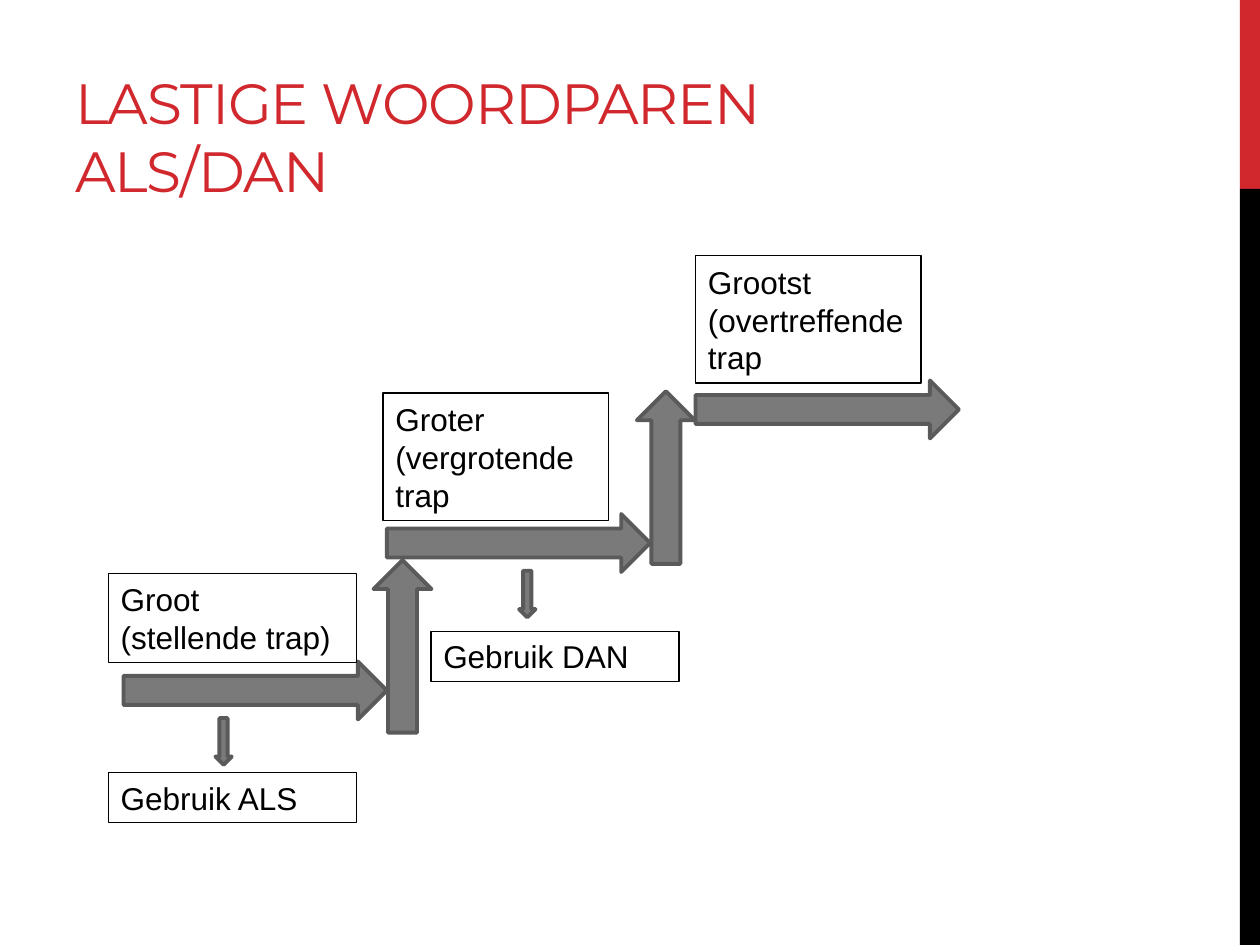
from pptx import Presentation
from pptx.dml.color import RGBColor
from pptx.enum.shapes import MSO_SHAPE as Kind
from pptx.enum.text import MSO_ANCHOR as Anchor, PP_ALIGN as Align
from pptx.util import Inches, Pt

RED = RGBColor(0xD1, 0x28, 0x2E)
BLACK = RGBColor(0, 0, 0)
GREY = RGBColor(0x7A, 0x7A, 0x7A)
EDGE = RGBColor(0x5A, 0x5A, 0x5A)

WIDE, HIGH = 10, 7.5
LONG, TALL, THICK = 2.09, 1.37, 0.46


def add_text(shape, text, size=18, font="Arial", color=BLACK,
             anchor=Anchor.MIDDLE, track=None):
    frame = shape.text_frame
    frame.word_wrap = True
    frame.vertical_anchor = anchor
    para = frame.paragraphs[0]
    para.alignment = Align.LEFT
    run = para.add_run()
    run.text = text
    run.font.size = Pt(size)
    run.font.name = font
    run.font.color.rgb = color
    if track is not None:
        run.font.language_id = None
        run._r.get_or_add_rPr().set("spc", str(round(track * 100)))


def add_shape(slide, kind, box, fill=None, line=None, width=0.75):
    shape = slide.shapes.add_shape(kind, *map(Inches, box))
    shape.shadow.inherit = False
    if fill is None:
        shape.fill.background()
    else:
        shape.fill.solid()
        shape.fill.fore_color.rgb = fill
    if line is None:
        shape.line.fill.background()
    else:
        shape.line.color.rgb = line
        shape.line.width = Pt(width)
    return shape


def add_arrow(slide, kind, box, turn=0):
    arrow = add_shape(slide, kind, box, GREY, EDGE, 2.25)
    arrow.rotation = turn


def add_label(slide, box, text):
    add_text(add_shape(slide, Kind.RECTANGLE, box, line=BLACK), text)


def add_side(slide, left, top, width, height):
    """Draw the two-coloured strip, red for its top fifth."""
    cut = height / 5
    add_shape(slide, Kind.RECTANGLE, (left, top, width, cut), RED)
    add_shape(slide, Kind.RECTANGLE,
              (left, top + cut, width, height - cut), BLACK)


def add_title(slide, box, text):
    title = slide.shapes.add_textbox(*map(Inches, box))
    add_text(title, text, size=32.4, font="Montserrat", color=RED,
             anchor=Anchor.BOTTOM, track=-0.6)


def add_step(slide, left, top, label, rise=None, use=None):
    """Draw one stair; label, rise and use are offset from its arrow."""
    add_arrow(slide, Kind.RIGHT_ARROW, (left, top, LONG, THICK))
    if rise is not None:
        add_arrow(slide, Kind.RIGHT_ARROW,
                  (left + 1.53, top + rise, TALL, THICK), turn=270)
    x, y, width, height, text = label
    add_label(slide, (left + x, top + y, width, height), text)
    if use:
        drop, x, y, text = use
        add_arrow(slide, Kind.DOWN_ARROW,
                  (left + drop, top + 0.45, 0.13, 0.37))
        add_label(slide, (left + x, top + y, 1.97, 0.4), text)


def main():
    deck = Presentation()
    deck.slide_width, deck.slide_height = Inches(WIDE), Inches(HIGH)
    slide = deck.slides.add_slide(deck.slide_layouts[6])
    add_side(slide, 9.84, 0, 0.16, HIGH)
    add_title(slide, (0.5, 0.17, 6.33, 1.5), "LASTIGE WOORDPAREN ALS/DAN")
    add_step(slide, 0.98, 5.25,
             (-0.12, -0.7, 1.97, 0.71, "Groot (stellende trap)"),
             rise=-0.35, use=(0.73, -0.12, 0.88, "Gebruik ALS"))
    add_step(slide, 3.07, 4.08,
             (-0.03, -0.96, 1.79, 1.01, "Groter (vergrotende trap"),
             rise=-0.52, use=(1.05, 0.35, 0.93, "Gebruik DAN"))
    add_step(slide, 5.52, 3.02,
             (0, -0.99, 1.79, 1.01, "Grootst (overtreffende trap"))
    deck.save("out.pptx")


if __name__ == "__main__":
    main()
